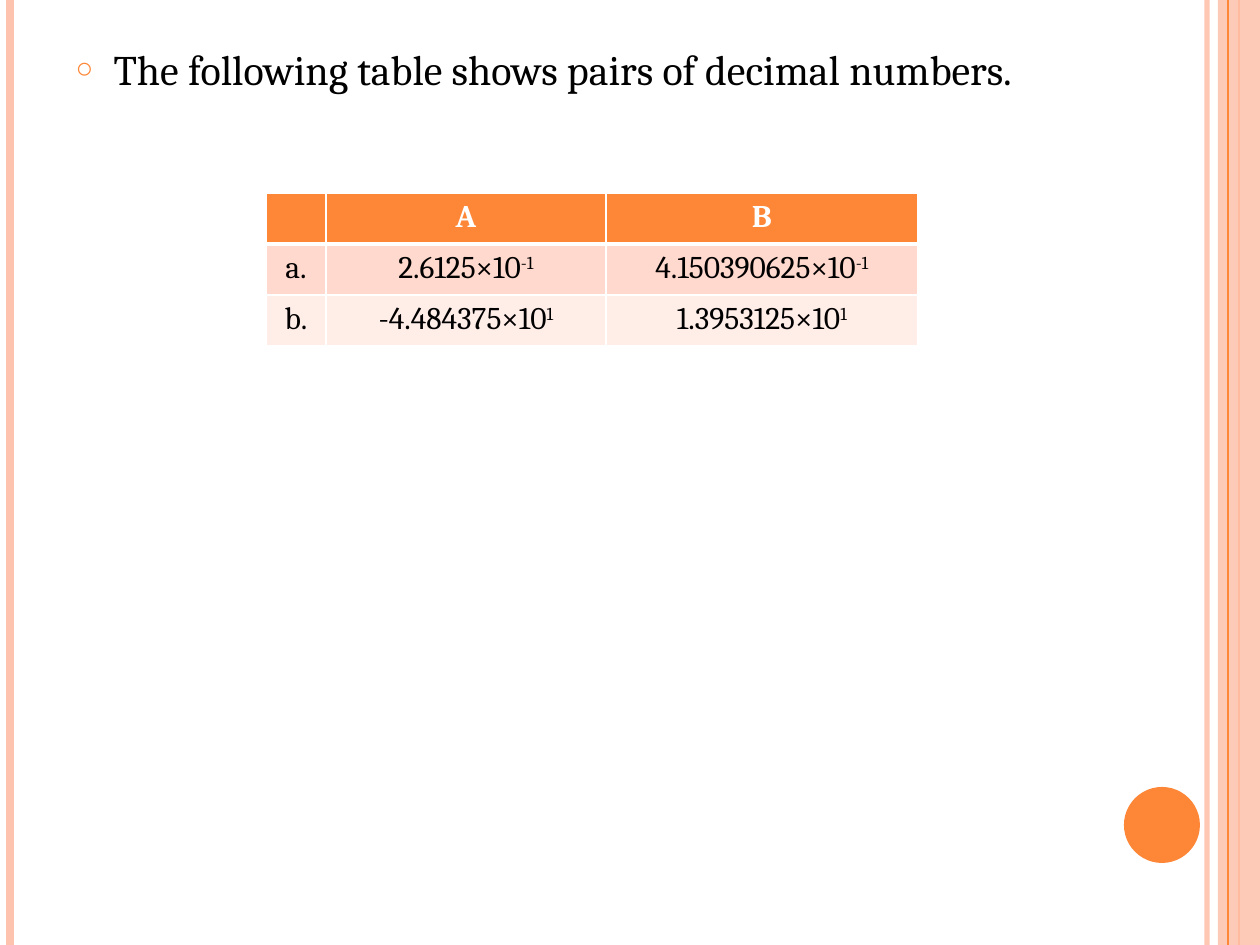
from dataclasses import dataclass

from lxml.etree import SubElement
from pptx import Presentation
from pptx.dml.color import RGBColor
from pptx.enum.shapes import MSO_CONNECTOR as Connector, MSO_SHAPE as Shape
from pptx.enum.text import MSO_AUTO_SIZE as AutoSize, PP_ALIGN as Align
from pptx.oxml.ns import qn
from pptx.util import Emu, Pt

PAGE_WIDTH, PAGE_HEIGHT = 1260, 945
FONT = "Cambria"
COLORS = {
    "accent": "FE8637",
    "peach": "FEC3AE",
    "band_dark": "FFD9CE",
    "band_light": "FFEDE8",
    "white": "FFFFFF",
    "black": "000000",
}


@dataclass
class Stripe:
    x: int
    color: str
    width: float
    opacity: int = 100


@dataclass
class Panel:
    kind: Shape
    left: int
    top: int
    width: int
    height: int
    color: str
    opacity: int = 100


@dataclass
class Row:
    fill: str
    text_color: str
    bold: bool
    bottom_border: int
    cells: list[tuple[str, ...]]  # text, then an optional superscript


DECORATIONS = [
    Stripe(1207, "peach", 3, 93),
    Stripe(10, "peach", 4.5),
    Stripe(1239, "accent", 1.5),
    Panel(Shape.RECTANGLE, 1218, 0, 42, PAGE_HEIGHT, "peach", 87),
    Stripe(1228, "accent", 0.75),
    Panel(Shape.OVAL, 1124, 787, 76, 76, "accent"),
]
COLUMN_WIDTHS = [60, 280, 312]
ROW_HEIGHT = 51
ROWS = [
    Row("accent", "white", True, 3, [(), ("A",), ("B",)]),
    Row("band_dark", "black", False, 1,
        [("a.",), ("2.6125×10", "-1"), ("4.150390625×10", "-1")]),
    Row("band_light", "black", False, 1,
        [("b.",), ("-4.484375×10", "1"), ("1.3953125×10", "1")]),
]


def px(value: int) -> Emu:
    return Emu(round(value * 914400 / 126))


def rgb(name: str) -> RGBColor:
    return RGBColor.from_string(COLORS[name])


def set_opacity(properties, percent: int) -> None:
    if percent < 100:
        color = next(properties.iter(qn("a:srgbClr")))
        SubElement(color, qn("a:alpha"), val=str(percent * 1000))


def draw_stripe(page, stripe: Stripe) -> None:
    line = page.shapes.add_connector(
        Connector.STRAIGHT, px(stripe.x), 0, px(stripe.x), px(PAGE_HEIGHT))
    line.line.color.rgb = rgb(stripe.color)
    line.line.width = Pt(stripe.width)
    properties = line._element.spPr
    set_opacity(properties, stripe.opacity)
    SubElement(properties, qn("a:effectLst"))


def draw_panel(page, panel: Panel) -> None:
    shape = page.shapes.add_shape(
        panel.kind, px(panel.left), px(panel.top), px(panel.width), px(panel.height))
    shape.shadow.inherit = False
    shape.fill.solid()
    shape.fill.fore_color.rgb = rgb(panel.color)
    shape.line.fill.background()
    set_opacity(shape._element.spPr, panel.opacity)


def add_span(para, text: str, size: int, color: str, bold: bool = False):
    span = para.add_run()
    span.text = text
    span.font.name = FONT
    span.font.size = Pt(size)
    span.font.bold = bold
    span.font.color.rgb = rgb(color)
    return span


def set_bullet(para) -> None:
    properties = para._p.get_or_add_pPr()
    properties.set("marL", str(px(38)))
    properties.set("indent", str(-px(38)))
    color = SubElement(properties, qn("a:buClr"))
    SubElement(color, qn("a:srgbClr"), val=COLORS["accent"])
    SubElement(properties, qn("a:buSzPct"), val="70000")
    SubElement(properties, qn("a:buChar"), char="○")


def fill_body(page) -> None:
    box = page.placeholders[1]
    box.left, box.top, box.width, box.height = px(63), px(37), px(1029), px(856)
    box.text_frame.auto_size = AutoSize.NONE
    para = box.text_frame.paragraphs[0]
    para.space_before = Pt(6)
    set_bullet(para)
    add_span(para, "The following table shows pairs of decimal numbers.", 24, "black")


def set_borders(cell, top: int, bottom: int) -> None:
    properties = cell._tc.get_or_add_tcPr()
    for side, width in (("L", 1), ("R", 1), ("T", top), ("B", bottom)):
        line = SubElement(properties, qn(f"a:ln{side}"), w=str(Pt(width)))
        fill = SubElement(line, qn("a:solidFill"))
        SubElement(fill, qn("a:srgbClr"), val=COLORS["white"])


def fill_cell(cell, row: Row, parts: tuple[str, ...], top_border: int) -> None:
    set_borders(cell, top_border, row.bottom_border)
    cell.fill.solid()
    cell.fill.fore_color.rgb = rgb(row.fill)
    para = cell.text_frame.paragraphs[0]
    para.alignment = Align.CENTER
    for index, text in enumerate(parts):
        span = add_span(para, text, 18, row.text_color, row.bold)
        if index == 1:
            span._r.get_or_add_rPr().set("baseline", "30000")


def draw_table(page) -> None:
    table = page.shapes.add_table(
        len(ROWS), len(COLUMN_WIDTHS), px(266), px(193),
        px(sum(COLUMN_WIDTHS)), px(ROW_HEIGHT * len(ROWS))).table
    for column, width in zip(table.columns, COLUMN_WIDTHS):
        column.width = px(width)
    top_border = 1
    for row_index, row in enumerate(ROWS):
        for column_index, parts in enumerate(row.cells):
            fill_cell(table.cell(row_index, column_index), row, parts, top_border)
        top_border = row.bottom_border


def main() -> None:
    deck = Presentation()
    deck.slide_width, deck.slide_height = px(PAGE_WIDTH), px(PAGE_HEIGHT)
    page = deck.slides.add_slide(deck.slide_layouts[1])
    title = page.shapes.title._element
    title.getparent().remove(title)
    for item in DECORATIONS:
        if isinstance(item, Stripe):
            draw_stripe(page, item)
        else:
            draw_panel(page, item)
    fill_body(page)
    draw_table(page)
    deck.save("out.pptx")


if __name__ == "__main__":
    main()
